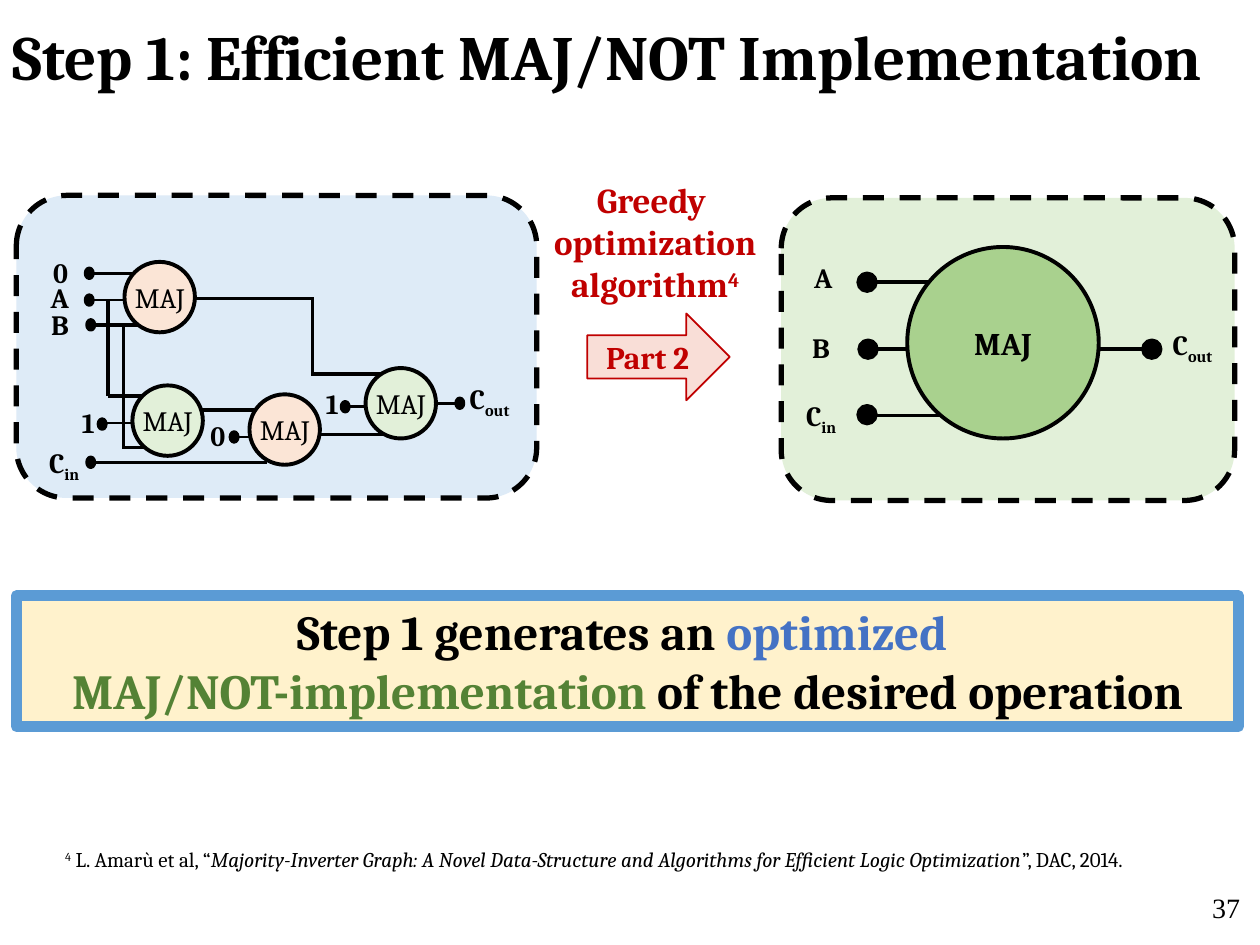
from pptx import Presentation
from pptx import util as u
from pptx.dml.color import RGBColor
from pptx.enum import dml, shapes, text
from pptx.oxml import xmlchemy as xml
from lxml import etree

Cm = u.Cm
KIND = shapes.MSO_SHAPE
LEFT, CENTER, RIGHT = text.PP_ALIGN.LEFT, text.PP_ALIGN.CENTER, text.PP_ALIGN.RIGHT
FONT = "Cambria"
COLORS = {
    "black": "000000", "red": "C00000", "pink": "F9DED7", "cream": "FFF2CC",
    "banner line": "5B9BD5", "blue": "4472C4", "dark green": "548235",
    "light green": "E2F0D9", "green": "A9D18E", "peach": "FBE5D6",
    "light blue": "DEEBF7",
}
DRAWING = "{http://schemas.openxmlformats.org/drawingml/2006/main}"
GATE, SMALL_DOT, LARGE_DOT = 1.42, (0.15, 0.2), (0.36, 0.36)
LABEL_WIDTHS = {"0": 0.86, "1": 0.86, "A": 0.89, "B": 0.9, "in": 1.19, "out": 1.42}


def rgb(name):
    return RGBColor.from_string(COLORS[name])


def write(frame, paragraphs, size, align=CENTER, bold=True, color="black", font=FONT):
    """Each paragraph is a list of (text, overrides) runs."""
    for index, runs in enumerate(paragraphs):
        paragraph = frame.paragraphs[0] if index == 0 else frame.add_paragraph()
        paragraph.alignment = align
        for words, changes in runs:
            run = paragraph.add_run()
            run.text = words
            run.font.name = font
            run.font.size = u.Pt(size)
            run.font.bold = bold
            run.font.italic = changes.get("italic", False)
            run.font.color.rgb = rgb(changes.get("color", color))
            if "baseline" in changes:
                run._r.get_or_add_rPr().set("baseline", str(changes["baseline"] * 1000))


def add_text(slide, box, paragraphs, size, wrap=True, anchor=text.MSO_ANCHOR.TOP, **style):
    frame = slide.shapes.add_textbox(*map(Cm, box)).text_frame
    frame.word_wrap = wrap
    frame.vertical_anchor = anchor
    write(frame, paragraphs, size, **style)


def add_block(slide, kind, box, fill, line, width):
    shape = slide.shapes.add_shape(kind, *map(Cm, box))
    shape.shadow.inherit = False
    shape.fill.solid()
    shape.fill.fore_color.rgb = rgb(fill)
    shape.line.color.rgb = rgb(line)
    shape.line.width = u.Pt(width)
    return shape


def add_panel(slide, box, fill):
    panel = add_block(slide, KIND.ROUNDED_RECTANGLE, box, fill, "black", 3)
    panel.line.dash_style = dml.MSO_LINE.DASH


def add_wire(slide, x1, y1, x2, y2, width=2):
    wire = slide.shapes.add_connector(shapes.MSO_CONNECTOR.STRAIGHT, *map(Cm, (x1, y1, x2, y2)))
    wire.line.color.rgb = rgb("black")
    wire.line.width = u.Pt(width)
    etree.SubElement(wire._element.spPr, DRAWING + "effectLst")


def add_dot(slide, x, y, size):
    width, height = size
    box = (x - width / 2, y - height / 2, width, height)
    add_block(slide, KIND.FLOWCHART_CONNECTOR, box, "black", "black", 2)


def add_gate(slide, x, y, diameter, fill, size, bold):
    gate = add_block(slide, KIND.OVAL, (x, y, diameter, diameter), fill, "black", 2.25)
    frame = gate.text_frame
    frame.margin_left = frame.margin_right = frame.margin_top = frame.margin_bottom = 0
    frame.vertical_anchor = text.MSO_ANCHOR.MIDDLE
    write(frame, [[("MAJ", {})]], size, bold=bold)


def add_label(slide, name, x, y):
    """A signal name; "in" and "out" become subscripts of C."""
    carry = name in ("in", "out")
    runs = [("C", {}), (name, {"baseline": -25})] if carry else [(name, {})]
    box = (x, y, LABEL_WIDTHS[name], 0.94)
    add_text(slide, box, [runs], 16, wrap=False, align=LEFT if carry else CENTER)


def add_original_circuit(slide):
    add_panel(slide, (0.33, 3.94, 10.49, 6.1), "light blue")
    for wire in (
        (1.9, 5.51, 2.72, 5.51), (1.9, 6.55, 2.92, 6.55), (1.83, 9.32, 5.38, 9.32),
        (3.94, 6.02, 6.32, 6.02), (6.3, 6.02, 6.3, 7.54), (6.27, 7.54, 7.92, 7.54),
        (2.18, 6.05, 2.18, 7.98), (2.18, 7.98, 2.87, 7.98),
        (2.49, 6.53, 2.49, 9.02), (2.46, 9.02, 2.97, 9.02),
        (4.04, 8.26, 5.33, 8.26), (6.38, 8.76, 8.08, 8.76), (8.79, 8.13, 9.35, 8.13),
    ):
        add_wire(slide, *wire)
    for x1, x2, y in ((1.83, 2.51, 6.05), (4.78, 5.03, 8.81),
                      (6.99, 7.39, 8.2), (2.03, 2.69, 8.53)):
        add_wire(slide, x1, y, x2, y, 1.5)
    for x, y in ((1.8, 5.51), (1.8, 6.05), (1.83, 6.55), (1.83, 9.32),
                 (2.06, 8.55), (4.72, 8.81), (6.96, 8.2), (9.27, 8.13)):
        add_dot(slide, x, y, SMALL_DOT)
    for x, y, fill in ((2.51, 5.28, "peach"), (2.67, 7.77, "light green"),
                       (5.03, 7.95, "peach"), (7.37, 7.42, "light green")):
        add_gate(slide, x, y, GATE, fill, 16, False)
    for name, x, y in (("0", 0.79, 5.03), ("A", 0.76, 5.54), ("B", 0.76, 6.07),
                       ("1", 1.35, 8.05), ("in", 0.74, 8.86), ("0", 3.96, 8.31),
                       ("1", 6.27, 7.67), ("out", 9.22, 7.57)):
        add_label(slide, name, x, y)


def add_optimized_circuit(slide):
    add_panel(slide, (15.75, 3.99, 9.14, 6.1), "light green")
    for x1, x2, y in ((17.63, 19.35, 5.69), (17.63, 19.35, 7.04),
                      (17.53, 19.23, 8.38), (21.56, 23.29, 7.04)):
        add_wire(slide, x1, y, x2, y)
    for x, y in ((17.48, 5.69), (17.5, 7.04), (17.48, 8.36), (23.22, 7.04)):
        add_dot(slide, x, y, LARGE_DOT)
    add_gate(slide, 18.29, 4.98, 3.86, "green", 18, True)
    for name, x, y in (("A", 16.15, 5.13), ("B", 16.1, 6.53),
                       ("in", 16, 7.9), ("out", 23.39, 6.48)):
        add_label(slide, name, x, y)


def add_transition(slide):
    heading = [[("Greedy ", {})], [("optimization", {})],
               [("algorithm", {}), ("4", {"baseline": 30})]]
    add_text(slide, (10.57, 3.48, 5.28, 2.82), heading, 20, color="red")
    arrow = add_block(slide, KIND.RIGHT_ARROW, (11.84, 6.32, 2.87, 1.75), "pink", "red", 1)
    arrow.text_frame.vertical_anchor = text.MSO_ANCHOR.MIDDLE
    write(arrow.text_frame, [[("Part 2", {})]], 18, color="red")


def add_banner(slide):
    banner = add_block(slide, KIND.RECTANGLE, (0.33, 12.01, 24.64, 2.64),
                       "cream", "banner line", 6)
    banner.text_frame.vertical_anchor = text.MSO_ANCHOR.TOP
    write(banner.text_frame, [
        [("Step 1 generates an ", {}), ("optimized ", {"color": "blue"})],
        [("MAJ/NOT-implementation ", {"color": "dark green"}),
         ("of the desired operation", {})],
    ], 28)


def main():
    presentation = Presentation()
    presentation.slide_width, presentation.slide_height = Cm(25.4), Cm(19.05)
    slide = presentation.slides.add_slide(presentation.slide_layouts[6])

    # Title
    add_text(slide, (0, 0.08, 25.6, 2.06),
             [[("Step 1: Efficient MAJ/NOT Implementation", {})]], 36,
             anchor=text.MSO_ANCHOR.MIDDLE, align=LEFT)

    # Circuits before and after optimization
    add_original_circuit(slide)
    add_transition(slide)
    add_optimized_circuit(slide)

    # Conclusion
    add_banner(slide)

    # Reference and page number
    reference = [
        (" ", {}), ("4", {"baseline": 30}), (" L. Amarù et al, “", {}),
        ("Majority-Inverter Graph: A Novel Data-Structure and Algorithms "
         "for Efficient Logic Optimization", {"italic": True}),
        ("”, DAC, 2014.", {}),
    ]
    add_text(slide, (0.97, 16.94, 23.47, 0.76), [reference], 12,
             wrap=False, align=LEFT, bold=False)
    add_text(slide, (19.33, 17.83, 5.92, 1.27), [[("37", {})]], 16,
             align=RIGHT, bold=False, font="Times New Roman")

    presentation.save("out.pptx")


if __name__ == "__main__":
    main()
